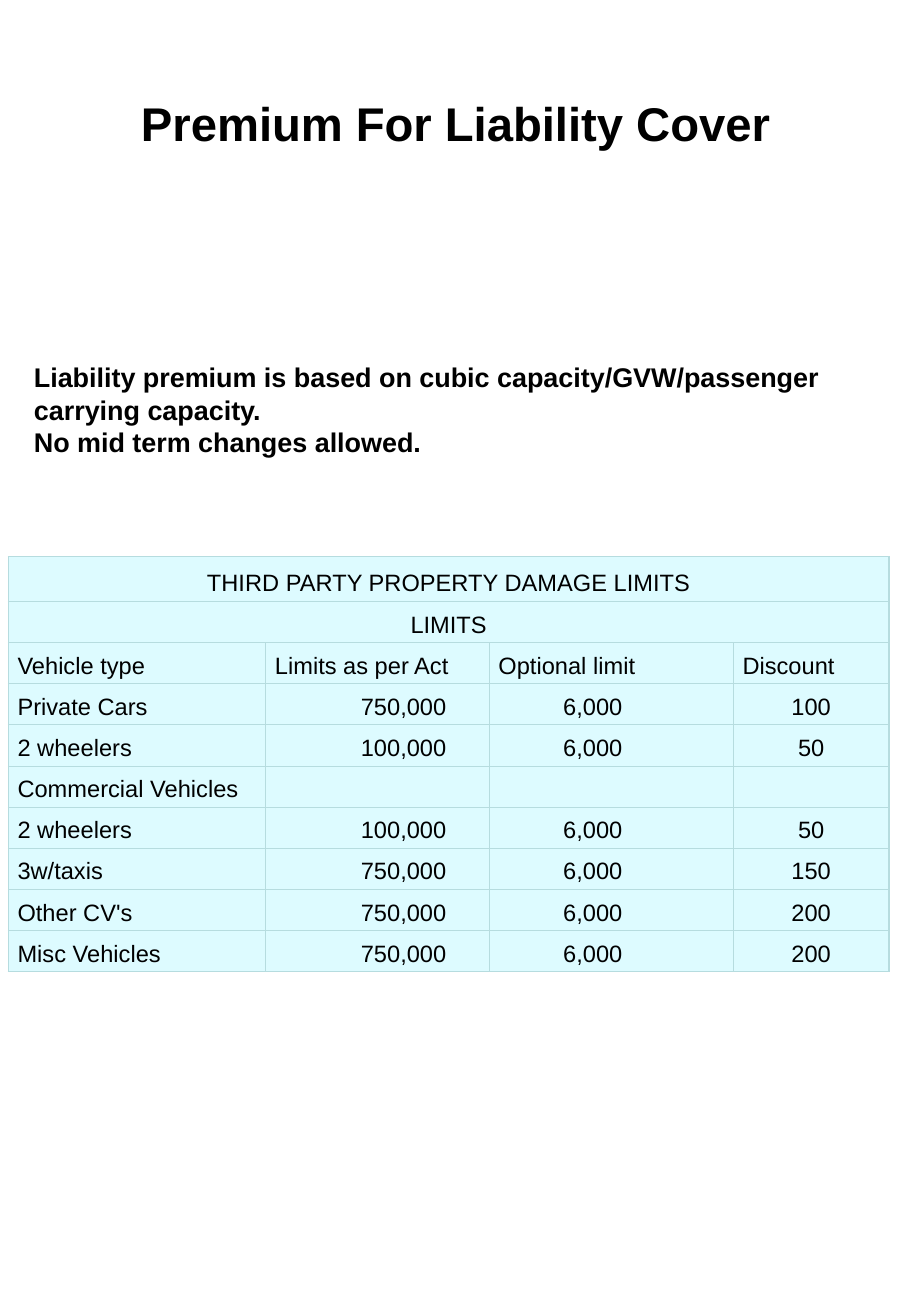
from lxml.etree import SubElement
from pptx import Presentation
from pptx.dml.color import RGBColor
from pptx.enum.text import MSO_ANCHOR, PP_ALIGN
from pptx.oxml.ns import qn
from pptx.util import Pt

COLORS = {"text": "000000", "cell": "DDFBFF", "border": "B6DCDF"}
FONT = "Arial"
CELL_SIZE = 14
SIDE_MARGIN = 5.4
COLUMN_WIDTHS = [152.6, 132.5, 144.7, 92.2]
HEADING_HEIGHT, ROW_HEIGHT = 26.6, 24.4
COLUMN_ALIGNMENTS = [PP_ALIGN.LEFT, PP_ALIGN.RIGHT, PP_ALIGN.RIGHT, PP_ALIGN.CENTER]
COLUMN_RIGHT_MARGINS = [SIDE_MARGIN, 25.5, 65.8, SIDE_MARGIN]

HEADINGS = ["THIRD PARTY PROPERTY DAMAGE LIMITS", "LIMITS"]
COLUMN_NAMES = ["Vehicle type", "Limits as per Act", "Optional limit", "Discount"]
LIMITS = [
    ["Private Cars", "750,000", "6,000", "100"],
    ["2 wheelers", "100,000", "6,000", "50"],
    ["Commercial Vehicles", "", "", ""],
    ["2 wheelers", "100,000", "6,000", "50"],
    ["3w/taxis", "750,000", "6,000", "150"],
    ["Other CV's", "750,000", "6,000", "200"],
    ["Misc Vehicles", "750,000", "6,000", "200"],
]
NOTES = [
    "Liability premium is based on cubic capacity/GVW/passenger carrying capacity.",
    "No mid term changes allowed.",
]


def add_span(para, text, size, bold=False):
    span = para.add_run()
    span.text = text
    span.font.name = FONT
    span.font.size = Pt(size)
    span.font.bold = bold
    span.font.color.rgb = RGBColor.from_string(COLORS["text"])


def add_text(page, box, lines, size, alignment, anchor):
    frame = page.shapes.add_textbox(*map(Pt, box)).text_frame
    frame.word_wrap = True
    frame.vertical_anchor = anchor
    for index, line in enumerate(lines):
        para = frame.add_paragraph() if index else frame.paragraphs[0]
        para.alignment = alignment
        add_span(para, line, size, bold=True)


def add_borders(cell):
    properties = cell._tc.get_or_add_tcPr()
    for position, side in enumerate(("a:lnL", "a:lnR", "a:lnT", "a:lnB")):
        line = properties.makeelement(qn(side), {"w": str(Pt(0.75))})
        fill = SubElement(line, qn("a:solidFill"))
        SubElement(fill, qn("a:srgbClr"), val=COLORS["border"])
        properties.insert(position, line)


def fill_cell(cell, text, alignment, right_margin=SIDE_MARGIN):
    cell.fill.solid()
    cell.fill.fore_color.rgb = RGBColor.from_string(COLORS["cell"])
    add_borders(cell)
    cell.vertical_anchor = MSO_ANCHOR.BOTTOM
    cell.margin_left, cell.margin_right = Pt(SIDE_MARGIN), Pt(right_margin)
    cell.margin_top = cell.margin_bottom = Pt(2.7)
    para = cell.text_frame.paragraphs[0]
    para.alignment = alignment
    if text:
        add_span(para, text, CELL_SIZE)
    else:
        SubElement(para._p, qn("a:endParaRPr"), sz=str(CELL_SIZE * 100))


def add_limits_table(page, box):
    row_count = len(HEADINGS) + 1 + len(LIMITS)
    table = page.shapes.add_table(row_count, len(COLUMN_WIDTHS), *map(Pt, box)).table
    table.first_row = table.horz_banding = False
    for column, width in zip(table.columns, COLUMN_WIDTHS):
        column.width = Pt(width)
    for index, row in enumerate(table.rows):
        row.height = Pt(ROW_HEIGHT if index else HEADING_HEIGHT)

    last_column = len(COLUMN_WIDTHS) - 1
    for row, heading in enumerate(HEADINGS):
        table.cell(row, 0).merge(table.cell(row, last_column))
        for column in range(last_column + 1):
            fill_cell(table.cell(row, column), "" if column else heading, PP_ALIGN.CENTER)
    for column, name in enumerate(COLUMN_NAMES):
        fill_cell(table.cell(len(HEADINGS), column), name, PP_ALIGN.LEFT)
    for row, values in enumerate(LIMITS, len(HEADINGS) + 1):
        for column, value in enumerate(values):
            fill_cell(table.cell(row, column), value,
                      COLUMN_ALIGNMENTS[column], COLUMN_RIGHT_MARGINS[column])


def main():
    deck = Presentation()
    deck.slide_width, deck.slide_height = Pt(540), Pt(779.76)
    page = deck.slides.add_slide(deck.slide_layouts[6])
    add_text(page, (13, 31, 514, 83.5), ["Premium For Liability Cover"], 28,
             PP_ALIGN.CENTER, MSO_ANCHOR.MIDDLE)
    add_limits_table(page, (5, 329.8, 522, 246.2))
    add_text(page, (13, 210.2, 527, 65.5), NOTES, 16, PP_ALIGN.LEFT, MSO_ANCHOR.TOP)
    deck.save("out.pptx")


if __name__ == "__main__":
    main()
